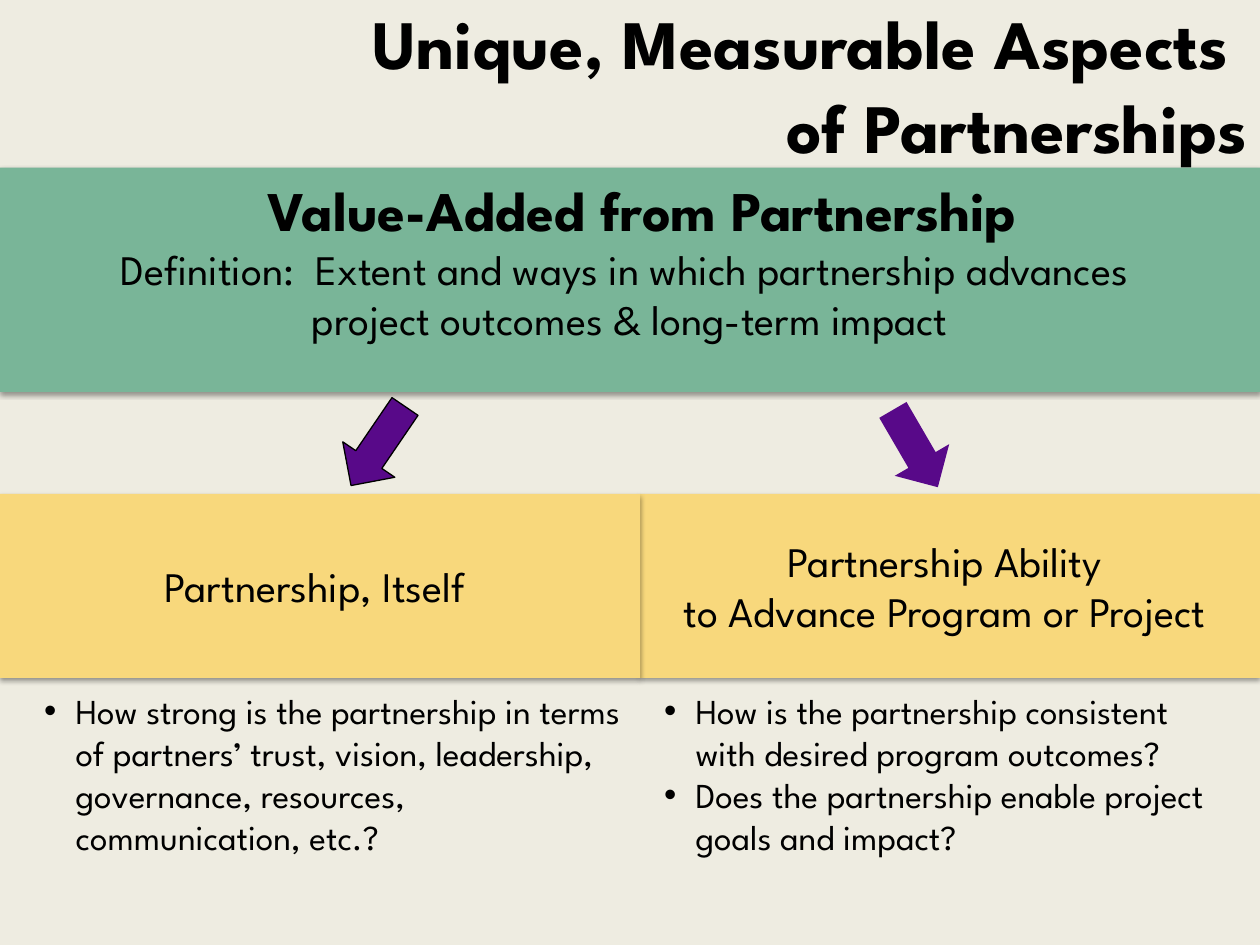
from lxml import etree
from pptx import Presentation
from pptx import util as u
from pptx.dml.color import RGBColor
from pptx.enum import shapes, text
from pptx.oxml.ns import qn

CREAM = RGBColor(0xEE, 0xEC, 0xE1)
GREEN = RGBColor(0x79, 0xB5, 0x98)
YELLOW = RGBColor(0xF8, 0xD8, 0x7C)
PURPLE = RGBColor(0x58, 0x09, 0x89)
BLACK = RGBColor(0, 0, 0)
FONT = "League Spartan"
CENTER = text.PP_ALIGN.CENTER


def place(item, left, top, width, height):
    item.left, item.top = u.Inches(left), u.Inches(top)
    item.width, item.height = u.Inches(width), u.Inches(height)


def format_para(para, size, align, bold=False):
    para.alignment = align
    para.space_before = u.Pt(0)
    for span in para.runs:
        span.font.name = FONT
        span.font.size = u.Pt(size)
        span.font.bold = bold
        span.font.color.rgb = BLACK


def set_indent(para, margin, first):
    properties = para._p.get_or_add_pPr()
    properties.set("marL", str(u.Inches(margin)))
    properties.set("indent", str(u.Inches(first)))


def add_shadow(shape):
    shape.shadow.inherit = False
    effects = shape._element.spPr.find(qn("a:effectLst"))
    shadow = etree.SubElement(
        effects, qn("a:outerShdw"), blurRad=str(u.Pt(3.1)),
        dist=str(u.Pt(1.6)), dir="5400000", rotWithShape="0")
    color = etree.SubElement(shadow, qn("a:srgbClr"), val=str(BLACK))
    etree.SubElement(color, qn("a:alpha"), val="38000")


def fill_title(title, wording):
    place(title, 1.42, 0, 8.58, 1.33)
    frame = title.text_frame
    frame.text = wording
    frame.auto_size = text.MSO_AUTO_SIZE.NONE
    frame.vertical_anchor = text.MSO_ANCHOR.MIDDLE
    format_para(frame.paragraphs[0], 39.6, text.PP_ALIGN.RIGHT, bold=True)


def fill_bullets(body, bounds, questions):
    place(body, *bounds)
    frame = body.text_frame
    frame.text = "\n".join(questions)
    frame.auto_size = text.MSO_AUTO_SIZE.NONE
    frame.vertical_anchor = text.MSO_ANCHOR.TOP
    for para in frame.paragraphs:
        format_para(para, 20, text.PP_ALIGN.LEFT)
        set_indent(para, 0.25, -0.25)


def add_band(page, bounds, color, lines):
    band = page.shapes.add_shape(
        shapes.MSO_SHAPE.RECTANGLE, *map(u.Inches, bounds))
    band.fill.solid()
    band.fill.fore_color.rgb = color
    band.line.fill.background()
    add_shadow(band)
    frame = band.text_frame
    frame.word_wrap = True
    frame.vertical_anchor = text.MSO_ANCHOR.MIDDLE
    frame.text = "\n".join(lines)
    for para in frame.paragraphs:
        format_para(para, 24, CENTER)
    return band


def add_arrow(page, bounds, rotation, outlined=False):
    arrow = page.shapes.add_shape(
        shapes.MSO_SHAPE.RIGHT_ARROW, *map(u.Inches, bounds))
    arrow.rotation = rotation
    arrow.shadow.inherit = False
    arrow.fill.solid()
    arrow.fill.fore_color.rgb = PURPLE
    if outlined:
        arrow.line.color.rgb = BLACK
        arrow.line.width = u.Pt(0.75)
    else:
        arrow.line.fill.background()


def main():
    deck = Presentation()
    deck.slide_width, deck.slide_height = u.Inches(10), u.Inches(7.5)
    page = deck.slides.add_slide(deck.slide_layouts.get_by_name("Two Content"))
    page.background.fill.solid()
    page.background.fill.fore_color.rgb = CREAM

    # Title and the questions under each column
    title, left_body, right_body = page.placeholders
    fill_title(title, "Unique, Measurable Aspects \vof Partnerships")
    fill_bullets(left_body, (0.25, 5.42, 4.83, 1.58), [
        "How strong is the partnership in terms of partners’ trust, vision, "
        "leadership, governance, resources, communication, etc.?"])
    fill_bullets(right_body, (5.17, 5.42, 4.5, 2.08), [
        "How is the partnership consistent with desired program outcomes?",
        "Does the partnership enable project goals and impact?"])

    # Column headings
    add_band(page, (5.08, 3.92, 4.92, 1.46), YELLOW, [
        "Partnership Ability ", "to Advance Program or Project "])
    add_band(page, (0, 3.92, 5.08, 1.46), YELLOW, ["Partnership, Itself "])

    # Definition band
    definition = add_band(page, (0, 1.33, 10, 1.78), GREEN, [
        "Value-Added from Partnership",
        "Definition:  Extent and ways in which partnership advances ",
        "project outcomes & long-term impact"])
    frame = definition.text_frame
    frame.vertical_anchor = text.MSO_ANCHOR.BOTTOM
    frame.margin_bottom = u.Inches(0.38)
    heading, *details = frame.paragraphs
    format_para(heading, 32, CENTER, bold=True)
    set_indent(heading, 0.2, 0)
    for para in details:
        set_indent(para, 0.25, -0.25)

    # Arrows from the definition to the columns
    add_arrow(page, (6.91, 3.31, 0.71, 0.5), 59.8)
    add_arrow(page, (2.62, 3.29, 0.76, 0.5), 124.3, outlined=True)

    deck.save("out.pptx")


if __name__ == "__main__":
    main()
